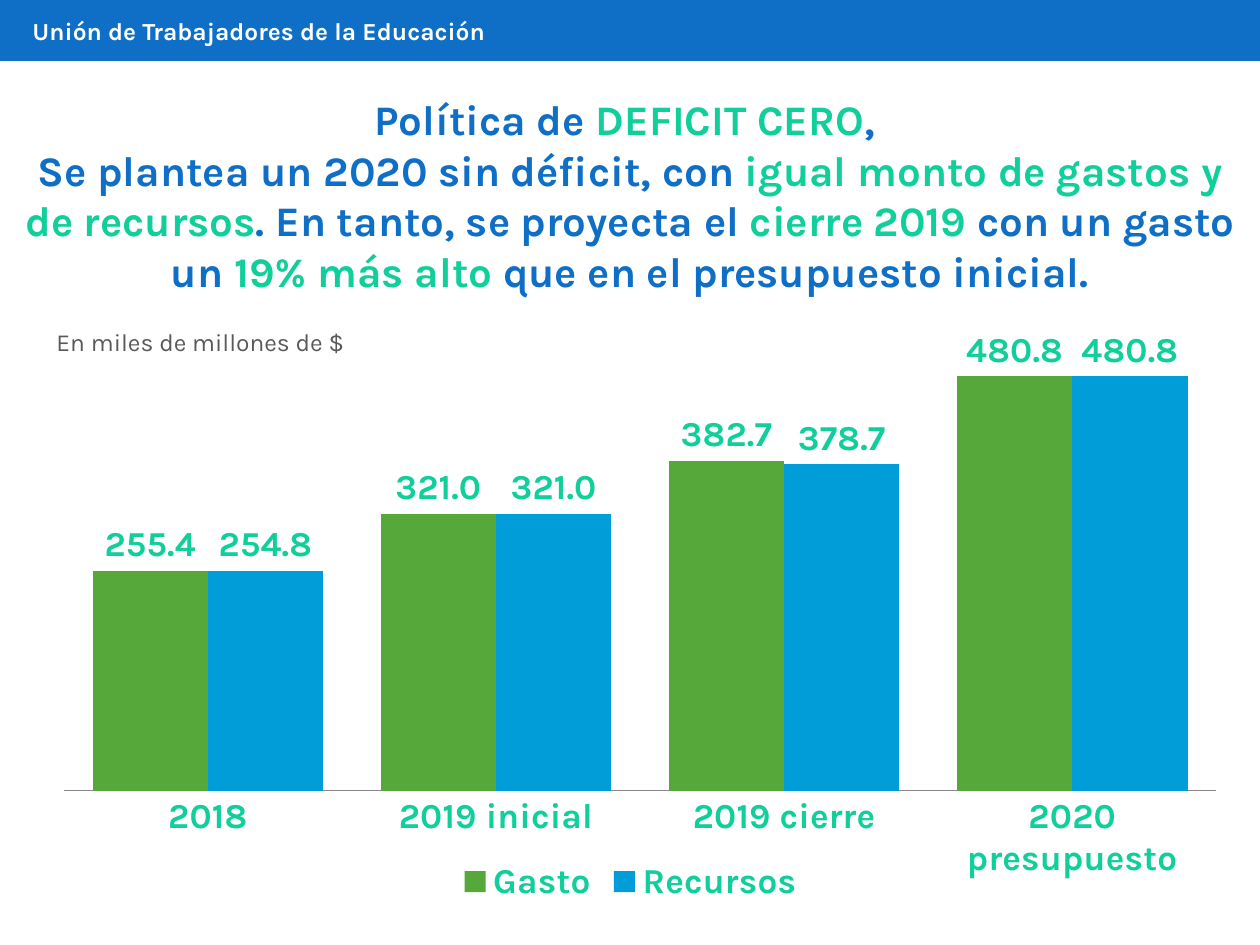
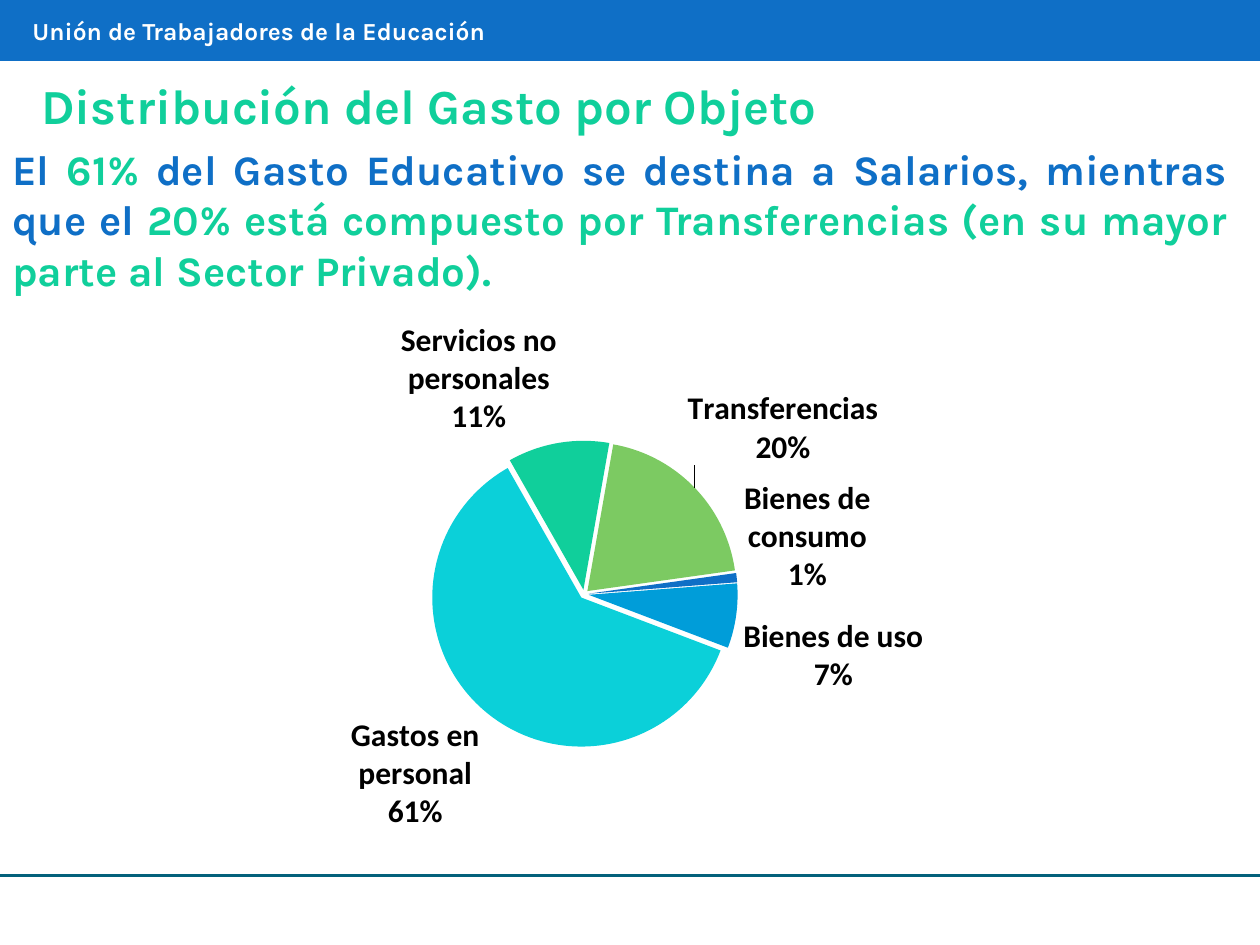
from copy import deepcopy

from lxml.etree import SubElement
from pptx import Presentation
from pptx.chart.data import CategoryChartData
from pptx.dml.color import RGBColor
from pptx.enum.chart import (XL_CHART_TYPE, XL_LABEL_POSITION,
                             XL_LEGEND_POSITION, XL_TICK_MARK)
from pptx.enum.shapes import MSO_CONNECTOR, MSO_SHAPE
from pptx.enum.text import PP_ALIGN
from pptx.oxml import parse_xml
from pptx.oxml.ns import nsdecls, qn
from pptx.util import Inches, Pt

HUES = {
    "blue": "0F6FC6", "mint": "10CF9B", "white": "FFFFFF", "gray": "595959",
    "axis": "878787", "teal": "04617B", "leaf": "55A839", "sky": "009DD9",
    "aqua": "0BD0D9", "lime": "7CCA62", "black": "000000",
}
FACE = "Karla"


def hue(name):
    return RGBColor.from_string(HUES[name])


def style(font, size, color=None, bold=True, face=FACE):
    font.name, font.size, font.bold = face, Pt(size), bold
    if color:
        font.color.rgb = hue(color)


def paint(item, color):
    item.fill.solid()
    item.fill.fore_color.rgb = hue(color)


def add_text(slide, box, paras, size, bold=True, align=None, after=0):
    """Each paragraph is a list of (text, color) runs."""
    frame = slide.shapes.add_textbox(*map(Inches, box)).text_frame
    frame.word_wrap = True
    for i, runs in enumerate(paras):
        para = frame.add_paragraph() if i else frame.paragraphs[0]
        para.alignment = align
        style(para.font, size, bold=bold)
        for text, color in runs:
            run = para.add_run()
            run.text = text
            run.font.color.rgb = hue(color)
    para.space_after = Pt(after)
    return frame


def add_band(slide):
    band = slide.shapes.add_shape(MSO_SHAPE.RECTANGLE, 0, 0, Inches(10), Inches(0.47))
    band.shadow.inherit = False
    paint(band, "blue")
    band.line.color.rgb = hue("blue")
    band.line.width = Pt(2)
    add_text(slide, (0.16, 0.08, 9.16, 0.34),
             [[("Unión de Trabajadores de la Educación", "white")]], 14)


def add_rule(slide, y):
    rule = slide.shapes.add_connector(MSO_CONNECTOR.STRAIGHT, 0, Inches(y),
                                      Inches(10), Inches(y))
    rule.line.color.rgb = hue("teal")
    rule.line.width = Pt(1.5)
    SubElement(rule._element.spPr, qn("a:effectLst"))


def add_graph(slide, kind, box, cats, series):
    data = CategoryChartData()
    data.categories = cats
    for name, vals in series:
        data.add_series(name, vals)
    chart = slide.shapes.add_chart(kind, *map(Inches, box), data).chart
    chart.has_title = False
    return chart


def place_plot(chart, x, y, w, h):
    """Fix the inner plot area, in fractions of the chart."""
    area = chart._chartSpace.chart.plotArea
    for old in area.findall(qn("c:layout")):
        area.remove(old)
    area.insert(0, parse_xml(
        f'<c:layout {nsdecls("c")}><c:manualLayout><c:layoutTarget val="inner"/>'
        f'<c:xMode val="edge"/><c:yMode val="edge"/><c:x val="{x}"/><c:y val="{y}"/>'
        f'<c:w val="{w}"/><c:h val="{h}"/></c:manualLayout></c:layout>'))


def add_bars(slide):
    chart = add_graph(
        slide, XL_CHART_TYPE.COLUMN_CLUSTERED, (0.28, 1.94, 9.45, 5.28),
        ["2018", "2019 inicial", "2019 cierre", "2020 presupuesto"],
        [("Gasto", (255.4, 321, 382.7, 480.8)),
         ("Recursos", (254.8, 321, 378.7, 480.8))])
    style(chart.font, 24, "mint")
    place_plot(chart, 0.024, 0.044, 0.968, 0.777)

    cat = chart.category_axis
    cat.major_tick_mark = XL_TICK_MARK.NONE
    cat.format.line.color.rgb = hue("axis")
    style(cat.tick_labels.font, 20, "mint")
    val = chart.value_axis
    val.visible = val.has_major_gridlines = False
    val.minimum_scale, val.maximum_scale = 0, 600

    chart.has_legend = True
    chart.legend.position = XL_LEGEND_POSITION.BOTTOM
    chart.legend.include_in_layout = False
    style(chart.legend.font, 20, "mint")

    plot = chart.plots[0]
    plot.gap_width, plot.overlap = 50, 0
    plot.vary_by_categories = False
    for bars, color in zip(plot.series, ("leaf", "sky")):
        paint(bars.format, color)
        labels = bars.data_labels
        labels.show_value = True
        labels.number_format = "#,##0.0"
        labels.number_format_is_linked = False
        labels.position = XL_LABEL_POSITION.OUTSIDE_END
        style(labels.font, 20, "mint")


def shift_labels(root, moves):
    """Move labels off their usual spots, keeping the shared settings."""
    shared = [child for child in root if child.tag != qn("c:showLeaderLines")]
    for spot, (index, x, y) in enumerate(moves):
        label = parse_xml(
            f'<c:dLbl {nsdecls("c")}><c:idx val="{index}"/><c:layout><c:manualLayout>'
            f'<c:x val="{x}"/><c:y val="{y}"/></c:manualLayout></c:layout></c:dLbl>')
        label.extend(deepcopy(shared))
        root.insert(spot, label)


def add_pie(slide):
    chart = add_graph(
        slide, XL_CHART_TYPE.PIE, (0.16, 2.41, 9.69, 4.39),
        ["Bienes de consumo", "Bienes de uso", "Gastos en personal",
         "Servicios no personales", "Transferencias"],
        [("Series 1", (1, 7, 61, 11, 20))])
    chart.has_legend = False
    style(chart.font, 10, "black", False, "Calibri")
    place_plot(chart, 0.336, 0.248, 0.252, 0.555)

    plot = chart.plots[0]
    pie = plot.series[0]
    for i, color in enumerate(("blue", "sky", "aqua", "mint", "lime")):
        paint(pie.points[i].format, color)
    pie._element.find(qn("c:tx")).addnext(
        parse_xml(f'<c:explosion {nsdecls("c")} val="3"/>'))
    angle = plot._element.find(qn("c:firstSliceAng"))
    if angle is None:
        angle = SubElement(plot._element, qn("c:firstSliceAng"))
    angle.set("val", "82")

    labels = pie.data_labels
    labels.show_value = False
    labels.show_category_name = labels.show_percentage = True
    labels.number_format = "0%"
    labels.number_format_is_linked = False
    labels.position = XL_LABEL_POSITION.OUTSIDE_END
    style(labels.font, 18, "black", True, "Calibri")
    root = labels._element
    root.find(qn("c:showBubbleSize")).addnext(
        parse_xml(f'<c:separator {nsdecls("c")}>\n</c:separator>'))
    shift_labels(root, [(0, 0, 0.03), (4, -0.01, -0.03)])


def add_deficit(deck):
    slide = deck.slides.add_slide(deck.slide_layouts[6])
    add_band(slide)
    add_text(slide, (0.35, 2.55, 3.87, 0.34),
             [[("En miles de millones de $", "gray")]], 14, bold=False)
    add_bars(slide)
    frame = add_text(slide, (0, 0.68, 10, 1.73), [
        [("Política de ", "blue"), ("DEFICIT CERO", "mint"), (", ", "blue")],
        [("Se plantea un 2020 sin déficit, con ", "blue"),
         ("igual monto de gastos y de recursos", "mint"),
         (". En tanto, se proyecta el ", "blue"),
         ("cierre 2019 ", "mint"),
         ("con un gasto un ", "blue"),
         ("19% más alto ", "mint"),
         ("que en el presupuesto inicial.", "blue")],
    ], 24, align=PP_ALIGN.CENTER, after=12)
    frame.paragraphs[0].line_spacing = Pt(30)


def add_split(deck):
    slide = deck.slides.add_slide(deck.slide_layouts[6])
    add_rule(slide, 6.95)
    add_band(slide)
    add_text(slide, (0.23, 0.55, 9.45, 0.57),
             [[("Distribución del Gasto por Objeto", "mint")]], 28, after=12)
    add_text(slide, (0, 1.09, 9.84, 1.31), [
        [("El ", "blue"), ("61% ", "mint"),
         ("del Gasto Educativo se destina a Salarios, mientras que el ", "blue"),
         ("20% está compuesto por Transferencias "
          "(en su mayor parte al Sector Privado).", "mint")],
    ], 24, align=PP_ALIGN.JUSTIFY)
    add_pie(slide)


def main():
    deck = Presentation()
    deck.slide_width, deck.slide_height = Inches(10), Inches(7.5)
    add_deficit(deck)
    add_split(deck)
    deck.save("out.pptx")


if __name__ == "__main__":
    main()
